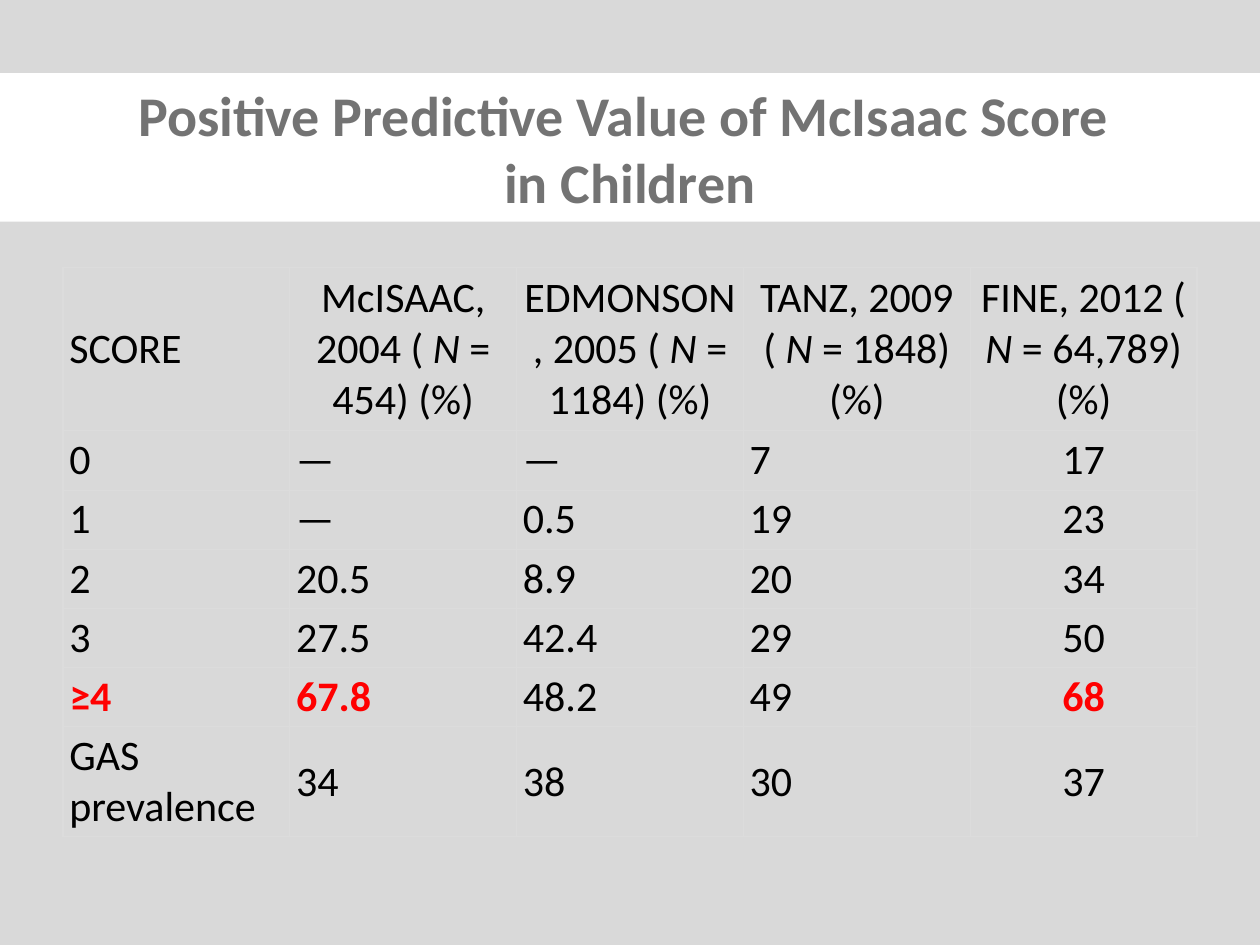
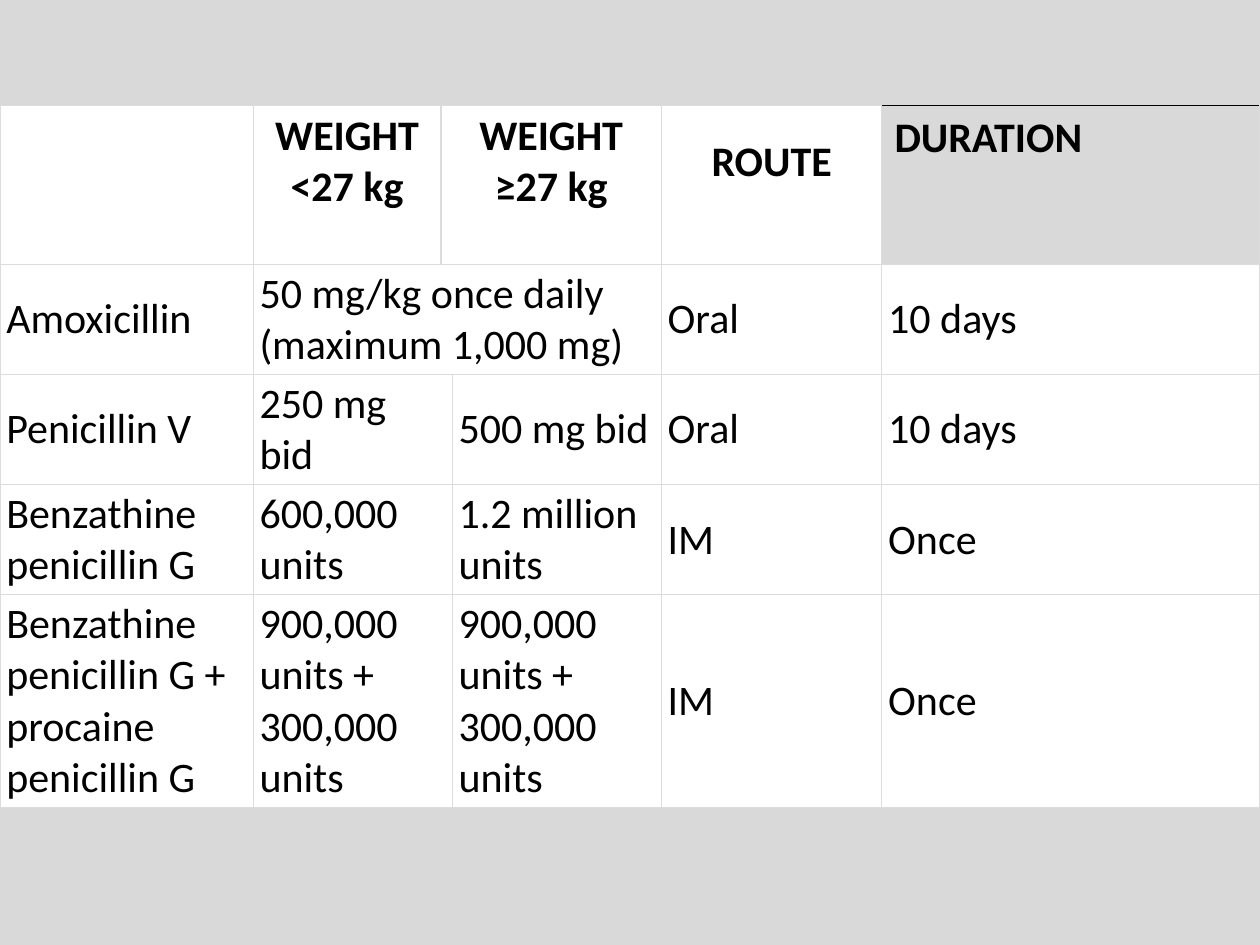
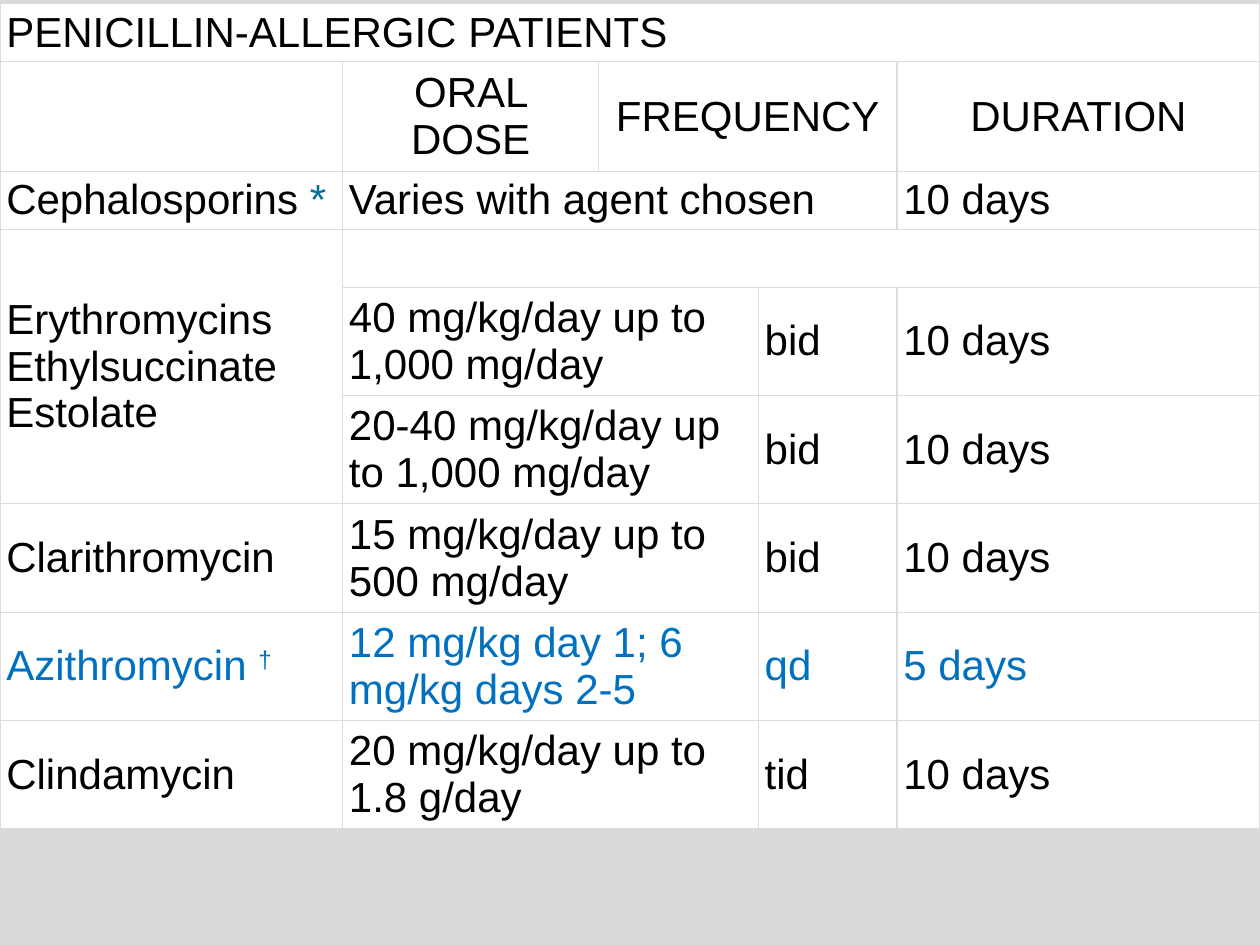
from lxml import etree
from pptx import Presentation
from pptx.dml.color import RGBColor
from pptx.enum import text
from pptx.oxml import ns
from pptx.util import Inches, Pt

BACKGROUND = "D9D9D9"
BORDER = "DCDCDC"
WHITE = "FFFFFF"
BLACK = "000000"
TITLE = "737373"
RED = "FF0000"
BLUE = "0070C0"
TEAL = "007398"


def rgb(value):
    return RGBColor.from_string(value)


def write(p, content, font="Calibri", size=24, color=BLACK, bold=False,
          italic=False, baseline=None, center=False):
    p.alignment = text.PP_ALIGN.CENTER if center else text.PP_ALIGN.LEFT
    for i, line in enumerate(content.split("\n")):
        if i:
            p.add_line_break()
        r = p.add_run()
        r.text = line
        r.font.name = font
        r.font.size = Pt(size)
        r.font.bold = bold
        r.font.italic = italic
        r.font.color.rgb = rgb(color)
        if baseline:
            r._r.get_or_add_rPr().set("baseline", str(baseline))


studies = [("McISAAC, 2004", "454"), ("EDMONSON, 2005", "1184"),
           ("TANZ, 2009", "1848"), ("FINE, 2012", "64,789")]
study_heads = [[(f"{study} ( ", {}), ("N ", {"italic": True}), (f"= {n}) (%)", {})]
               for study, n in studies]
alert = {"color": RED, "bold": True}
middle = {"center": True}
head = {"center": True, "bold": True}
azithro = {"color": BLUE}

score_table = {
    "at": (0.5, 2.12), "font": "Calibri", "fill": None,
    "cols": [1.8] * 5,
    "heights": [1.3] + [0.47] * 5 + [0.87],
    "rows": [
        ["SCORE"] + study_heads,
        ["0", "—", "—", "7", "17"],
        ["1", "—", "0.5", "19", "23"],
        ["2", "20.5", "8.9", "20", "34"],
        ["3", "27.5", "42.4", "29", "50"],
        ["≥4", "67.8", "48.2", "49", "68"],
        ["GAS prevalence", "34", "38", "30", "37"],
    ],
    "merges": [],
    "formats": {
        **{(0, c): middle for c in range(1, 5)},
        **{(r, 4): middle for r in range(1, 7)},
        (5, 0): alert, (5, 1): alert, (5, 4): {**alert, **middle},
    },
}

dose_table = {
    "at": (0, 0.84), "font": "Calibri", "fill": WHITE,
    "cols": [2.01, 1.49, 0.09, 1.66, 1.75, 3],
    "heights": [1.26, 0.87, 0.86, 0.86, 1.66],
    "rows": [
        ["", "WEIGHT <27 kg", "WEIGHT ≥27 kg", "", "ROUTE", "DURATION"],
        ["Amoxicillin", "50 mg/kg once daily (maximum 1,000 mg)", "", "", "Oral", "10 days"],
        ["Penicillin V", "250 mg bid", "", "500 mg bid", "Oral", "10 days"],
        ["Benzathine penicillin G", "600,000 units", "", "1.2 million units", "IM", "Once"],
        ["Benzathine penicillin G + procaine penicillin G", "900,000 units + 300,000 units",
         "", "900,000 units + 300,000 units", "IM", "Once"],
    ],
    "merges": [(0, 2, 0, 3), (1, 1, 1, 3)] + [(r, 1, r, 2) for r in (2, 3, 4)],
    "formats": {(0, 1): head, (0, 2): head, (0, 4): head, (0, 5): {"bold": True}},
}

allergy_table = {
    "at": (0, 0.03), "font": "Arial", "fill": WHITE,
    "cols": [2.72, 2.03, 1.27, 1.1, 2.88],
    "heights": [0.46, 0.87, 0.46, 0.46] + [0.86] * 5,
    "rows": [
        ["PENICILLIN-ALLERGIC PATIENTS", "", "", "", ""],
        ["", "ORAL DOSE", "FREQUENCY", "", "DURATION"],
        [[("Cephalosporins ", {}), ("*", {"color": TEAL})],
         "Varies with agent chosen", "", "", "10 days"],
        ["Erythromycins \nEthylsuccinate \nEstolate", "", "", "", ""],
        ["", "40 mg/kg/day up to 1,000 mg/day", "", "bid", "10 days"],
        ["", "20-40 mg/kg/day up to 1,000 mg/day", "", "bid", "10 days"],
        ["Clarithromycin", "15 mg/kg/day up to 500 mg/day", "", "bid", "10 days"],
        [[("Azithromycin ", {}), ("†", {"baseline": 30000})],
         "12 mg/kg day 1; 6 mg/kg days 2-5", "", "qd", "5 days"],
        ["Clindamycin", "20 mg/kg/day up to 1.8 g/day", "", "tid", "10 days"],
    ],
    "merges": [(0, 0, 0, 4), (1, 2, 1, 3), (2, 1, 2, 3), (3, 0, 5, 0), (3, 1, 3, 4)]
              + [(r, 1, r, 2) for r in range(4, 9)],
    "formats": {
        **{(1, c): middle for c in (1, 2, 4)},
        **{(7, c): azithro for c in (0, 1, 3, 4)},
    },
}

prs = Presentation()
prs.slide_width = Inches(10)
prs.slide_height = Inches(7.5)
background = prs.slide_master.background.fill
background.solid()
background.fore_color.rgb = rgb(BACKGROUND)
title_only, blank = prs.slide_layouts[5], prs.slide_layouts[6]

tables = []
for layout, spec_table in [(title_only, score_table), (blank, dose_table), (blank, allergy_table)]:
    s = prs.slides.add_slide(layout)
    left, top = spec_table["at"]
    cols, heights = spec_table["cols"], spec_table["heights"]
    table = s.shapes.add_table(len(heights), len(cols), Inches(left), Inches(top),
                               Inches(sum(cols)), Inches(sum(heights))).table
    table.first_row = table.horz_banding = False
    for column, width in zip(table.columns, cols):
        column.width = Inches(width)
    for row, height in zip(table.rows, heights):
        row.height = Inches(height)
    for r1, c1, r2, c2 in spec_table["merges"]:
        table.cell(r1, c1).merge(table.cell(r2, c2))

    for r, row in enumerate(spec_table["rows"]):
        for c, content in enumerate(row):
            cell = table.cell(r, c)
            is_duration_head = spec_table is dose_table and (r, c) == (0, 5)
            cell.margin_left = cell.margin_right = Inches(0.1 if is_duration_head else 0.05)
            cell.margin_top = cell.margin_bottom = Inches(0.05 if is_duration_head else 0.03)
            cell.vertical_anchor = (text.MSO_ANCHOR.TOP if is_duration_head
                                    else text.MSO_ANCHOR.MIDDLE)
            if spec_table is dose_table and r == 0 and not is_duration_head:
                cell.margin_bottom = Inches(0.4)

            tcPr = cell._tc.get_or_add_tcPr()
            for side in ("lnL", "lnR", "lnT", "lnB"):
                ln = etree.SubElement(tcPr, ns.qn(f"a:{side}"), w=str(Pt(0.75)))
                line_fill = etree.SubElement(ln, ns.qn("a:solidFill"))
                line_color = BLACK if is_duration_head and side == "lnT" else BORDER
                etree.SubElement(line_fill, ns.qn("a:srgbClr"), val=line_color)
            if spec_table["fill"] and not is_duration_head:
                cell.fill.solid()
                cell.fill.fore_color.rgb = rgb(spec_table["fill"])
            else:
                cell.fill.background()

            if content:
                runs = [(content, {})] if isinstance(content, str) else content
                cell_format = spec_table["formats"].get((r, c), {})
                for run_text, run_format in runs:
                    write(cell.text_frame.paragraphs[0], run_text,
                          **{"font": spec_table["font"], **cell_format, **run_format})

title = prs.slides[0].shapes.title
title.left, title.top = Inches(0), Inches(0.58)
title.width, title.height = Inches(10), Inches(1.18)
title.fill.solid()
title.fill.fore_color.rgb = rgb(WHITE)
tf = title.text_frame
tf.word_wrap = True
tf.auto_size = text.MSO_AUTO_SIZE.NONE
tf.vertical_anchor = text.MSO_ANCHOR.MIDDLE
title_format = {"size": 32, "color": TITLE, "bold": True, "center": True}
write(tf.paragraphs[0], "Positive Predictive Value of McIsaac Score ", **title_format)
write(tf.add_paragraph(), "in Children", **title_format)

prs.save("out.pptx")
